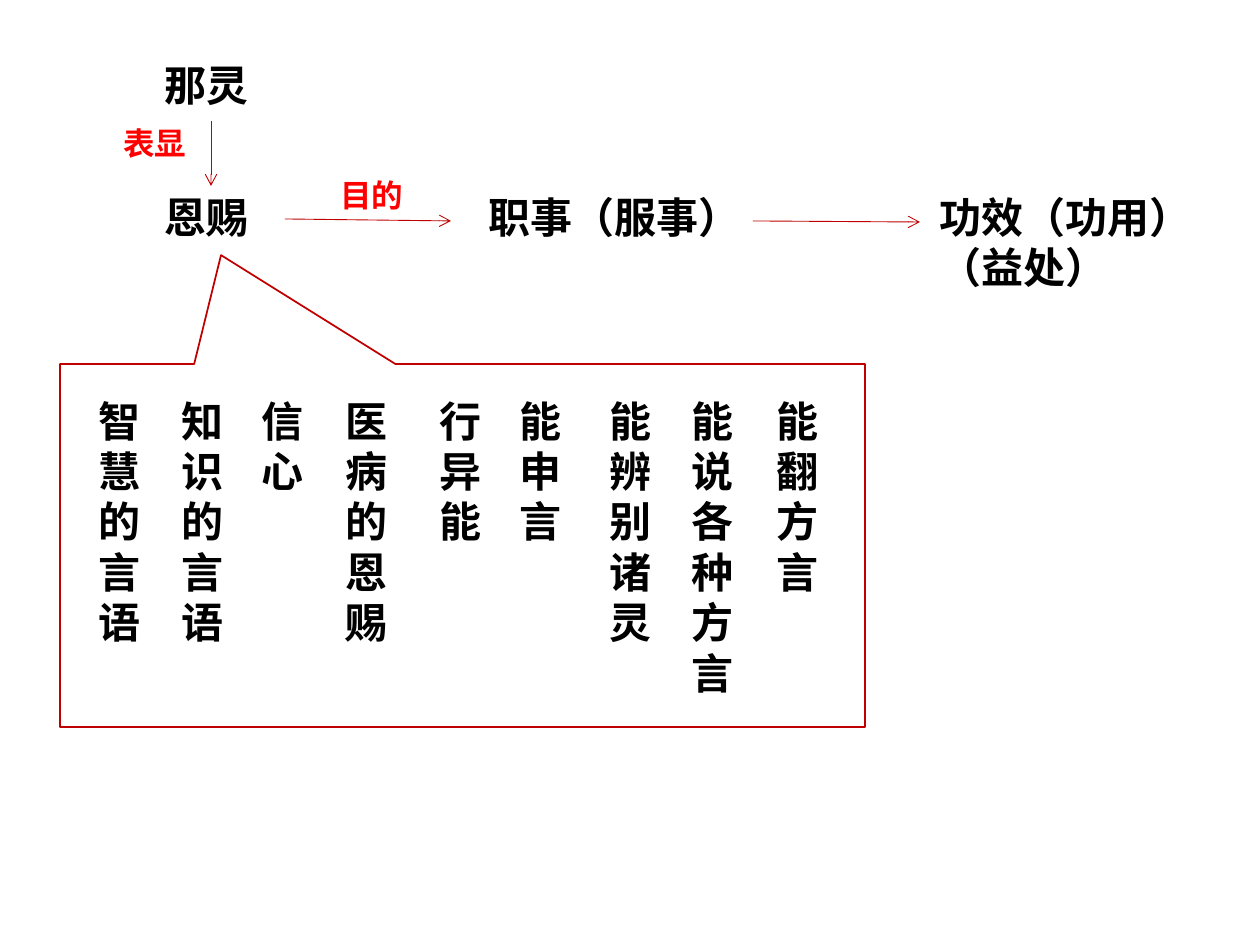
import pptx
import pptx.util
import pptx.dml.color
import pptx.enum.shapes
import pptx.enum.text
import pptx.oxml
import pptx.oxml.ns

PX = 914400 // 126
COLOURS = {"text": "000000", "label": "FF0000", "line": "C00000"}

# Content: text lines, then left, top, width, height in px
TERMS = [
    (["那灵"], 152, 53, 160, 63),
    (["恩赐"], 152, 185, 137, 63),
    (["职事（服事）"], 476, 185, 278, 63),
    (["功效（功用）", "（益处）"], 927, 185, 281, 115),
]
LABELS = [
    (["表显"], 111, 118, 88, 50),
    (["目的"], 328, 170, 88, 50),
]
# Arrows: start x, y and end x, y
ARROWS = [
    (211, 121, 211, 186),
    (285, 219, 451, 221),
    (753, 221, 920, 222),
]
# Gifts: text, left, width
GIFTS = [
    ("智慧的言语", 86, 47),
    ("知识的言语", 169, 67),
    ("信心", 249, 55),
    ("医病的恩赐", 333, 63),
    ("行异能", 427, 63),
    ("能申言", 507, 71),
    ("能辨别诸灵", 597, 60),
    ("能说各种方言", 679, 55),
    ("能翻方言", 764, 72),
]
GIFT_TOP, GIFT_PADDING, GIFT_LINE = 389, 12, 51
CALLOUT = (60, 364, 805, 363)
CALLOUT_TIP = (-0.3, -0.8)


def px(*lengths):
    return [length * PX for length in lengths]


def colour(name):
    return pptx.dml.color.RGBColor.from_string(COLOURS[name])


def add_text(page, lines, place, size=24, font="Calibri", ink="text", wrap=True):
    box = page.shapes.add_textbox(*px(*place))
    frame = box.text_frame
    frame.text = "\n".join(lines)
    frame.word_wrap = wrap
    frame.auto_size = pptx.enum.text.MSO_AUTO_SIZE.SHAPE_TO_FIT_TEXT
    for para in frame.paragraphs:
        for span in para.runs:
            span.font.size = pptx.util.Pt(size)
            span.font.bold = True
            span.font.name = font
            span.font.color.rgb = colour(ink)
            if font != "Calibri":
                east = pptx.oxml.parse_xml(
                    f'<a:ea {pptx.oxml.ns.nsdecls("a")} typeface="{font}"/>')
                span.font._element.append(east)


def add_arrow(page, ends):
    arrow = page.shapes.add_connector(
        pptx.enum.shapes.MSO_CONNECTOR.STRAIGHT, *px(*ends))
    arrow.line.color.rgb = colour("line")
    arrow.line.width = pptx.util.Pt(0.5)
    names = pptx.oxml.ns.nsdecls("a")
    arrow.line._get_or_add_ln().append(
        pptx.oxml.parse_xml(f'<a:tailEnd {names} type="arrow"/>'))
    arrow._element.spPr.append(pptx.oxml.parse_xml(f"<a:effectLst {names}/>"))


def main():
    deck = pptx.Presentation()
    deck.slide_width = pptx.util.Inches(10)
    deck.slide_height = pptx.util.Inches(7.5)
    page = deck.slides.add_slide(deck.slide_layouts[6])

    # Main chain of terms
    for lines, *place in TERMS:
        add_text(page, lines, place, wrap=lines != ["职事（服事）"])
    for ends in ARROWS:
        add_arrow(page, ends)

    # Gifts, one character to a line
    for gift, left, width in GIFTS:
        height = 2 * GIFT_PADDING + GIFT_LINE * len(gift) - 12
        add_text(page, [gift], (left, GIFT_TOP, width, height))

    # Callout around the gifts
    callout = page.shapes.add_shape(
        pptx.enum.shapes.MSO_SHAPE.RECTANGULAR_CALLOUT, *px(*CALLOUT))
    callout.adjustments[0], callout.adjustments[1] = CALLOUT_TIP
    callout.shadow.inherit = False
    callout.fill.background()
    callout.line.color.rgb = colour("line")
    callout.line.width = pptx.util.Pt(1)

    # Arrow labels
    for lines, *place in LABELS:
        add_text(page, lines, place, 18, "Noto Sans CJK SC", "label", False)

    deck.save("out.pptx")


if __name__ == "__main__":
    main()
